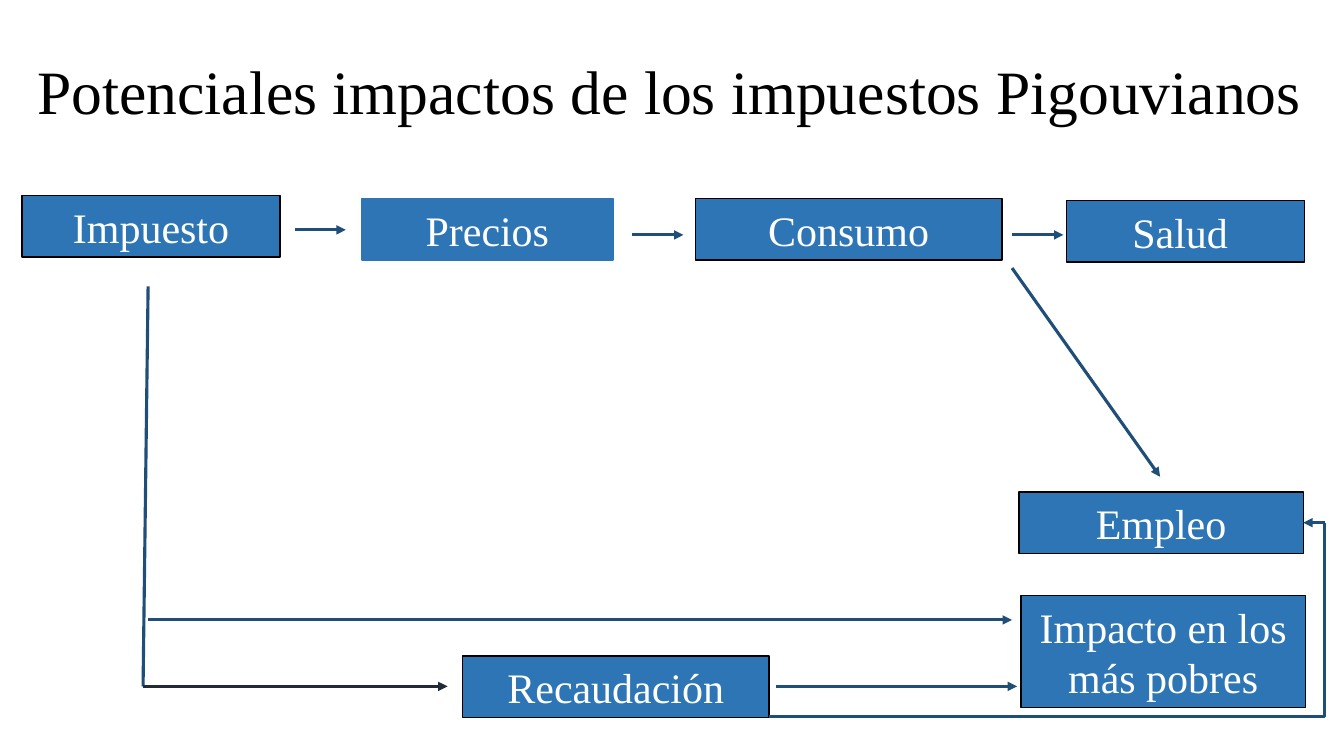
from dataclasses import dataclass

from lxml import etree
from pptx import Presentation
from pptx.dml.color import RGBColor
from pptx.enum.shapes import MSO_CONNECTOR, MSO_SHAPE
from pptx.enum.text import MSO_ANCHOR, MSO_AUTO_SIZE, PP_ALIGN
from pptx.oxml.ns import qn
from pptx.shapes.autoshape import Shape
from pptx.shapes.connector import Connector
from pptx.slide import Slide
from pptx.text.text import TextFrame
from pptx.util import Pt

RECT = MSO_SHAPE.RECTANGLE
STRAIGHT = MSO_CONNECTOR.STRAIGHT
MIDDLE = MSO_ANCHOR.MIDDLE
NO_FIT = MSO_AUTO_SIZE.NONE
GROW = MSO_AUTO_SIZE.SHAPE_TO_FIT_TEXT
LEFT = PP_ALIGN.LEFT
CENTER = PP_ALIGN.CENTER
RIGHT_SIDE = 3


@dataclass(frozen=True)
class Theme:
    font: str = "Times New Roman"
    title_size: float = 44
    box_size: float = 30
    edge: float = 1
    stroke: float = 2.25
    black: str = "000000"
    white: str = "FFFFFF"
    blue: str = "2E75B6"
    navy: str = "1F4E79"
    slate: str = "222A35"


THEME = Theme()


@dataclass(frozen=True)
class Box:
    text: str
    left: float
    top: float
    width: float
    height: float = 43.9
    edge: str = THEME.black


@dataclass(frozen=True)
class Link:
    x1: float
    y1: float
    x2: float
    y2: float
    arrow: bool = True
    color: str = THEME.navy
    target: str = ""


TITLE = Box("Potenciales impactos de los impuestos Pigouvianos",
            19.4, 15.1, 920.9, 104.4)

BOXES = [
    Box("Salud ", 761.8, 143.3, 169.9),
    Box("Consumo", 496.8, 141.8, 218.9),
    Box("Impuesto", 15.8, 139.7, 184.3),
    Box("Precios", 258.5, 141.8, 179.3, edge=THEME.blue),
    Box("Empleo", 727.9, 351.4, 203),
    Box("Recaudación", 330.5, 468.7, 218.9),
    Box("Impacto en los más pobres", 729.4, 425.5, 203, 79.9),
]

TRUNK = 105.8      # top of the line that leaves Impuesto
FOOT = 102.2       # its lower end
REVENUE = 490.3    # height of the arrows around Recaudación
RETURN_X, RETURN_TOP, RETURN_LOW = 946.1, 373.35, 512
FLOW = 167.8       # height of the arrows in the top row
EXIT = 722.9       # right of Consumo

LINKS = [
    Link(TRUNK, 204.5, FOOT, REVENUE, arrow=False),
    Link(TRUNK, 442.8, EXIT, 442.8),
    Link(554.4, REVENUE, 726.5, REVENUE),
    Link(FOOT, REVENUE, 319.7, REVENUE, color=THEME.slate),
    Link(RETURN_X, RETURN_TOP, RETURN_X, RETURN_LOW, arrow=False),
    Link(549.4, RETURN_LOW, RETURN_X, RETURN_LOW, arrow=False),
    Link(RETURN_X, RETURN_TOP, 930.9, RETURN_TOP, target="Empleo"),
    Link(EXIT, 191.5, 828.7, 340.6),
    Link(211, 164.2, 247, 164.2),
    Link(451.4, FLOW, 488.2, FLOW),
    Link(EXIT, FLOW, 759.6, FLOW),
]


def apply(item: object, values: dict[str, object]) -> None:
    """Set each named attribute of the item."""
    for name, value in values.items():
        setattr(item, name, value)


def write(frame: TextFrame, text: str, size: float, color: str,
          layout: dict[str, object], para: dict[str, object]) -> None:
    apply(frame, {"word_wrap": True, "vertical_anchor": MIDDLE} | layout)
    line = frame.paragraphs[0]
    apply(line, para)
    run = line.add_run()
    run.text = text
    apply(run.font, {"name": THEME.font, "size": Pt(size)})
    run.font.color.rgb = RGBColor.from_string(color)


def set_title(slide: Slide, spot: Box) -> None:
    title = slide.shapes.title
    apply(title, {"left": Pt(spot.left), "top": Pt(spot.top),
                  "width": Pt(spot.width), "height": Pt(spot.height)})
    write(title.text_frame, spot.text, THEME.title_size, THEME.black,
          {"auto_size": NO_FIT}, {"alignment": LEFT, "line_spacing": 0.9})


def draw_box(slide: Slide, box: Box) -> Shape:
    shape = slide.shapes.add_shape(RECT, Pt(box.left), Pt(box.top),
                                   Pt(box.width), Pt(box.height))
    shape.shadow.inherit = False
    shape.fill.solid()
    shape.fill.fore_color.rgb = RGBColor.from_string(THEME.blue)
    shape.line.color.rgb = RGBColor.from_string(box.edge)
    shape.line.width = Pt(THEME.edge)
    write(shape.text_frame, box.text, THEME.box_size, THEME.white,
          {"auto_size": GROW}, {"alignment": CENTER})
    return shape


def draw_link(slide: Slide, link: Link, shapes: dict[str, Shape]) -> Connector:
    line = slide.shapes.add_connector(STRAIGHT, Pt(link.x1), Pt(link.y1),
                                      Pt(link.x2), Pt(link.y2))
    line.line.color.rgb = RGBColor.from_string(link.color)
    line.line.width = Pt(THEME.stroke)
    props = line._element.spPr
    if link.arrow:
        etree.SubElement(props.find(qn("a:ln")), qn("a:tailEnd"),
                         type="triangle")
    etree.SubElement(props, qn("a:effectLst"))
    if link.target:
        line.end_connect(shapes[link.target], RIGHT_SIDE)
    return line


def main() -> None:
    deck = Presentation()
    apply(deck, {"slide_width": Pt(960), "slide_height": Pt(540)})
    slide = deck.slides.add_slide(deck.slide_layouts[5])
    set_title(slide, TITLE)
    shapes = {box.text: draw_box(slide, box) for box in BOXES}
    for link in LINKS:
        draw_link(slide, link, shapes)
    deck.save("out.pptx")


if __name__ == "__main__":
    main()
